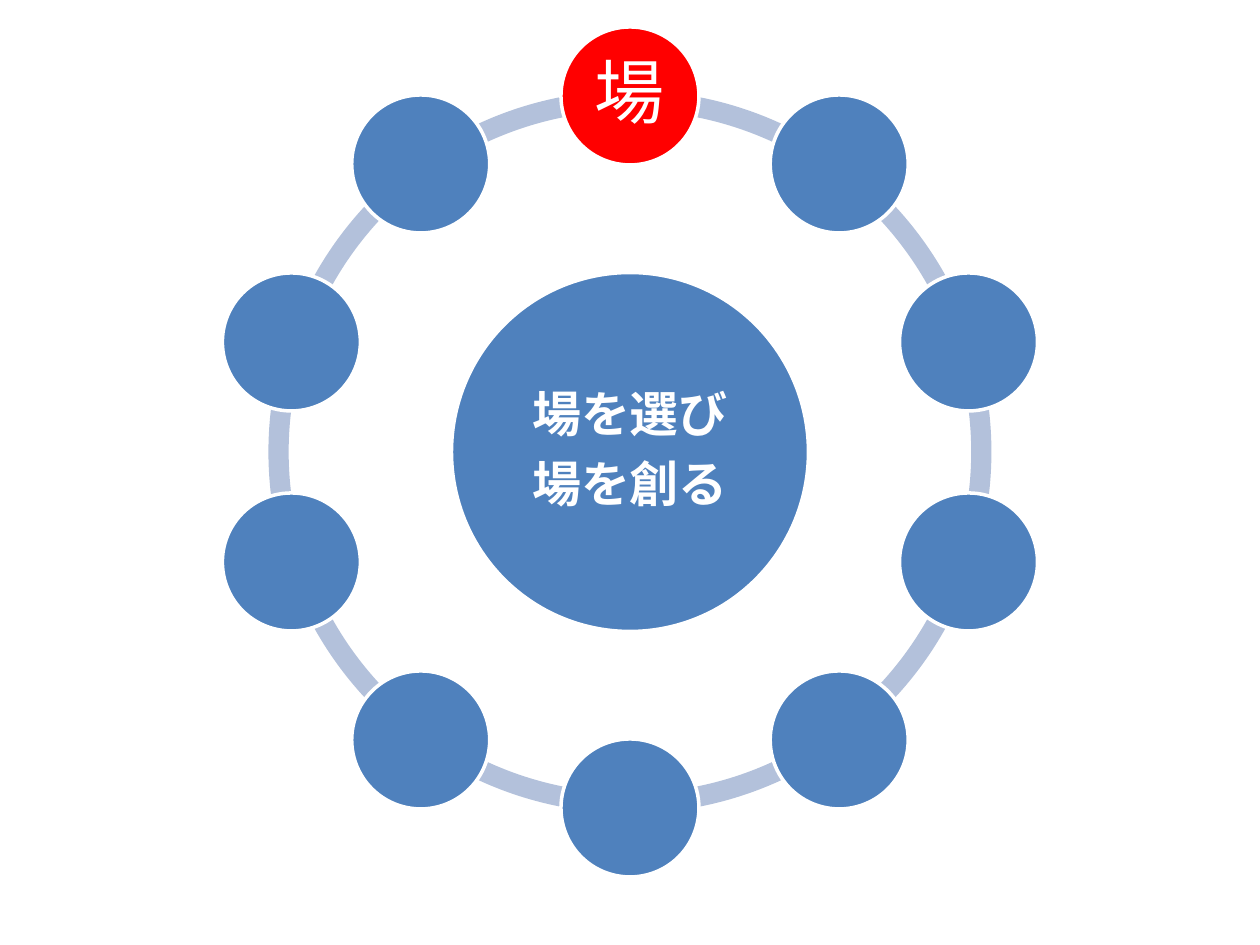
import math

from lxml import etree
from pptx import Presentation, util as u
from pptx.dml.color import RGBColor
from pptx.enum import shapes, text
from pptx.oxml.ns import qn

PX = 914400 // 126
COLORS = {"node": "4F81BD", "accent": "FF0000", "ring": "B3C1DB", "white": "FFFFFF"}
CX, CY = 630, 452
ORBIT, NODE, HUB_W, HUB_H, RING = 356, 138, 357, 359, 723
COUNT = 10
STEP = 360 / COUNT


def rgb(name):
    return RGBColor.from_string(COLORS[name])


def add_centred(s, kind, cx, cy, w, h, color):
    """Add a filled shape around a centre point."""
    box = [round(v * PX) for v in (cx - w / 2, cy - h / 2, w, h)]
    sp = s.shapes.add_shape(kind, *box)
    sp.shadow.inherit = False
    sp.fill.solid()
    sp.fill.fore_color.rgb = rgb(color)
    sp.line.fill.background()
    return sp


def add_arc(s, start):
    """Add one ring segment; angles are in 60000ths of a degree, adjustments in 100000ths."""
    sp = add_centred(s, shapes.MSO_SHAPE.BLOCK_ARC, CX, CY, RING, RING, "ring")
    for i, angle in enumerate((start % 360, (start + STEP) % 360)):
        sp.adjustments[i] = angle * 0.6
    sp.adjustments[2] = 0.028


def add_circle(s, cx, cy, w, h, color):
    sp = add_centred(s, shapes.MSO_SHAPE.OVAL, cx, cy, w, h, color)
    sp.line.color.rgb = rgb("white")
    sp.line.width = u.Pt(2)
    return sp


def add_label(sp, lines, inset, font):
    """Write centred lines inside a circle."""
    tf = sp.text_frame
    frame = dict.fromkeys(
        ("margin_left", "margin_top", "margin_right", "margin_bottom"), inset * PX)
    frame.update(word_wrap=True, vertical_anchor=text.MSO_ANCHOR.MIDDLE)
    for key, value in frame.items():
        setattr(tf, key, value)
    for i, line in enumerate(lines):
        p = tf.add_paragraph() if i else tf.paragraphs[0]
        p.alignment = text.PP_ALIGN.CENTER
        p.line_spacing = 0.9
        # Space after as a share of the line height
        after = etree.SubElement(p._p.get_or_add_pPr(), qn("a:spcAft"))
        etree.SubElement(after, qn("a:spcPct"), val="35000")
        r = p.add_run()
        r.text = line
        r.font.color.rgb = rgb("white")
        for key, value in font.items():
            setattr(r.font, key, value)


def main():
    prs = Presentation()
    prs.slide_width, prs.slide_height = u.Inches(10), u.Inches(7.5)
    s = prs.slides.add_slide(prs.slide_layouts[6])

    # Ring
    for i in range(COUNT):
        add_arc(s, 270 - STEP * (i + 1))

    # Hub
    hub = add_circle(s, CX, CY, HUB_W, HUB_H, "node")
    add_label(hub, ["場を選び", "場を創る"], 5,
              {"name": "Calibri", "size": u.Pt(28), "bold": True})

    # Nodes, clockwise from the top
    for i in range(COUNT):
        a = math.radians(STEP * i)
        node = add_circle(s, CX + ORBIT * math.sin(a), CY - ORBIT * math.cos(a),
                          NODE, NODE, "node" if i else "accent")
        if i == 0:
            add_label(node, ["場"], 8, {"name": "Calibri", "size": u.Pt(40)})

    prs.save("out.pptx")


if __name__ == "__main__":
    main()
